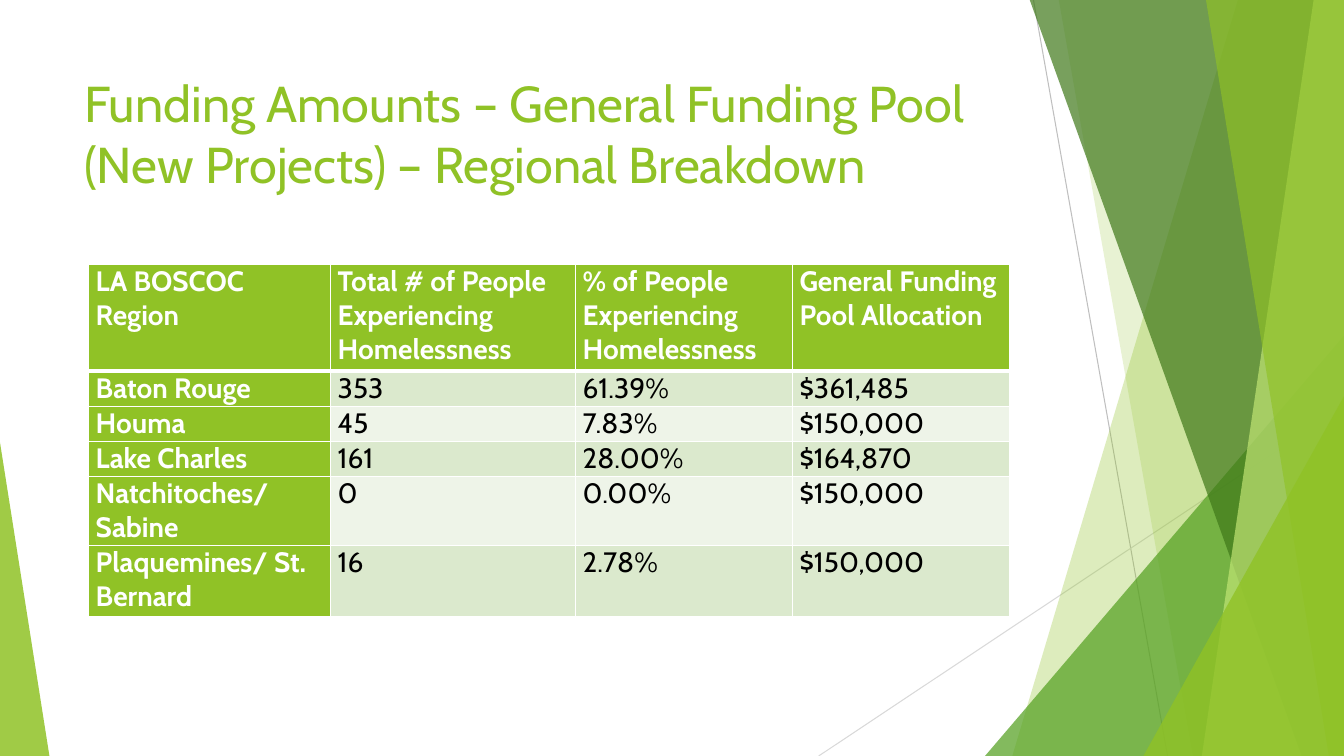
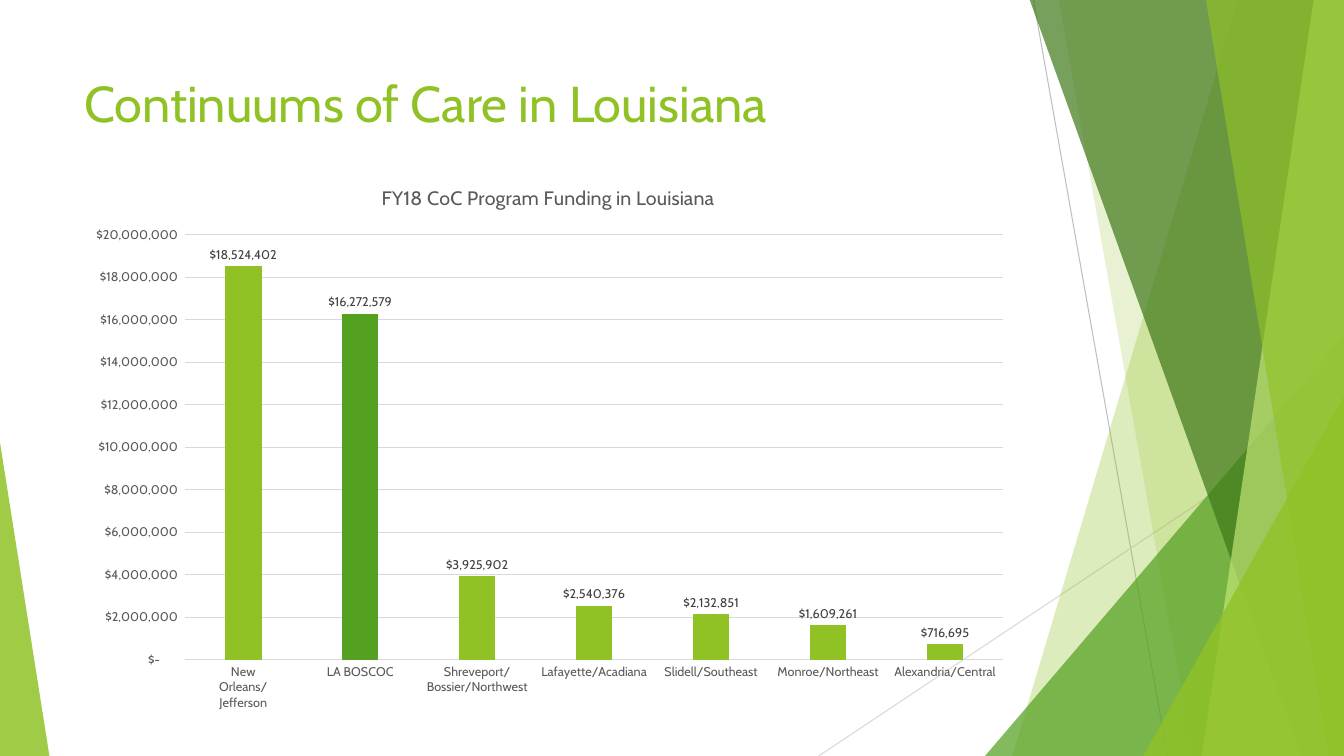
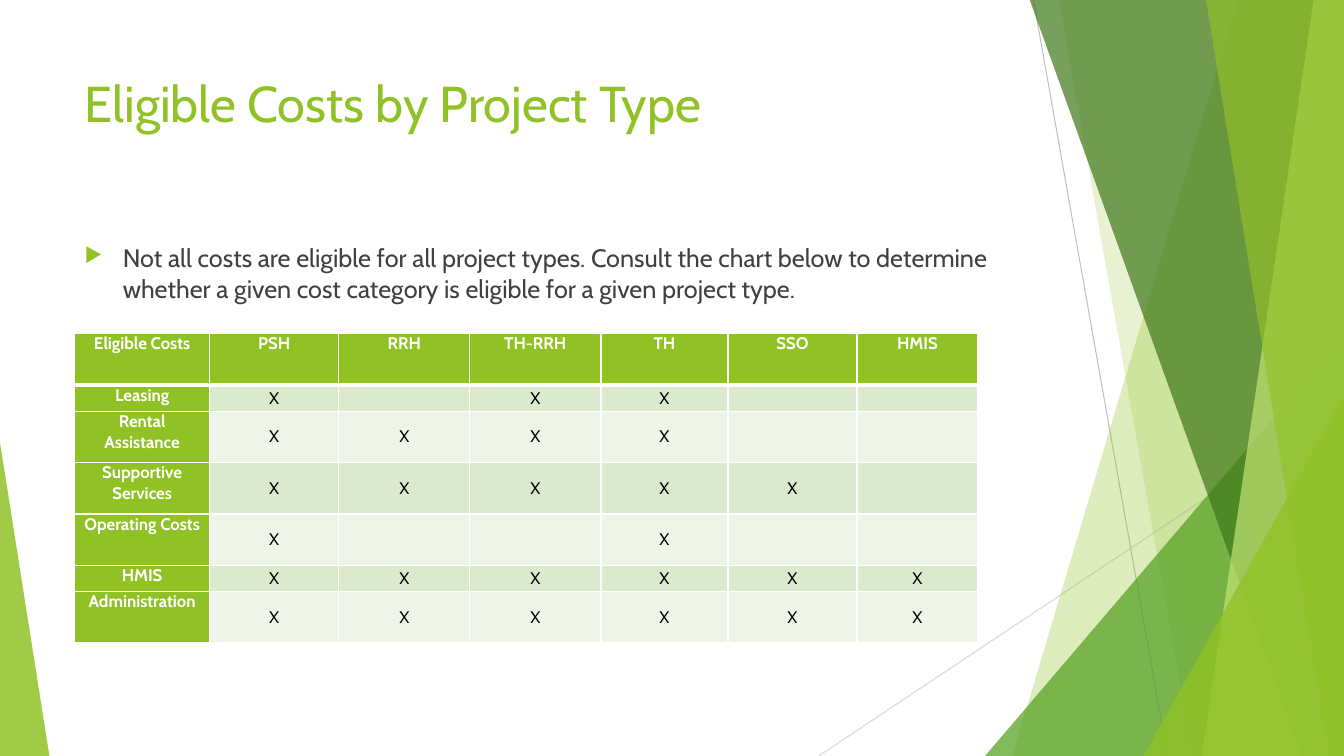
from lxml.etree import SubElement
from pptx import Presentation
from pptx.chart.data import CategoryChartData
from pptx.dml.color import RGBColor
from pptx.enum.chart import XL_CHART_TYPE, XL_LABEL_POSITION, XL_TICK_MARK
from pptx.enum.shapes import MSO_CONNECTOR, MSO_SHAPE
from pptx.enum.text import MSO_ANCHOR, PP_ALIGN
from pptx.oxml.ns import qn
from pptx.util import Inches, Pt

FONT = "Cabin"
LIME = RGBColor(0x90, 0xC2, 0x26)
GREEN = RGBColor(0x54, 0xA0, 0x21)
FOREST = RGBColor(0x3F, 0x78, 0x19)
PALE_LIME = RGBColor(0xC0, 0xE4, 0x74)
ROW_DARK = RGBColor(0xDB, 0xE9, 0xCD)
ROW_LIGHT = RGBColor(0xEE, 0xF4, 0xE8)
WHITE = RGBColor(0xFF, 0xFF, 0xFF)
BLACK = RGBColor(0, 0, 0)
INK = RGBColor(0x40, 0x40, 0x40)
GRAY = RGBColor(0x59, 0x59, 0x59)
RULE_DARK = RGBColor(0xBF, 0xBF, 0xBF)
RULE_LIGHT = RGBColor(0xD9, 0xD9, 0xD9)

WIDTH, HEIGHT = 13.33, 7.5
LEFT, CONTENT_WIDTH = 0.74, 9.4
DOLLARS = r'_("$"* #,##0_);_("$"* \(#,##0\);_("$"* "-"??_);_(@_)'


def write(frame, text, size=18, color=INK, bold=False, align=PP_ALIGN.LEFT):
    frame.word_wrap = True
    paragraph = frame.paragraphs[0]
    paragraph.alignment = align
    if text:
        run = paragraph.add_run()
        run.text = text
        run.font.name, run.font.size, run.font.bold = FONT, Pt(size), bold
        run.font.color.rgb = color
    else:  # an empty cell must not stretch its row
        paragraph._p.get_or_add_endParaRPr().set("sz", str(size * 100))
    return paragraph


def add_grid(slide, left, top, widths, heights, rows, size, align, value_anchor):
    table = slide.shapes.add_table(
        len(rows), len(widths), Inches(left), Inches(top),
        Inches(sum(widths)), Inches(sum(heights))).table
    for column, width in zip(table.columns, widths):
        column.width = Inches(width)
    for r, (row, height) in enumerate(zip(rows, heights)):
        table.rows[r].height = Inches(height)
        for c, text in enumerate(row):
            cell = table.cell(r, c)
            heading = r == 0 or c == 0
            cell.margin_left = cell.margin_right = Inches(0.07)
            cell.margin_top = cell.margin_bottom = 0
            cell.vertical_anchor = MSO_ANCHOR.TOP if heading else value_anchor
            write(cell.text_frame, text, size=size, bold=heading,
                  color=WHITE if heading else BLACK, align=align)
            # White borders, heavier under the header row
            for side in ("lnL", "lnR", "lnT", "lnB"):
                heavy = (r, side) in ((0, "lnB"), (1, "lnT"))
                border = SubElement(cell._tc.get_or_add_tcPr(), qn(f"a:{side}"),
                                    w=str(Pt(3 if heavy else 1)))
                SubElement(SubElement(border, qn("a:solidFill")),
                           qn("a:srgbClr"), val=str(WHITE))
            cell.fill.solid()
            cell.fill.fore_color.rgb = (
                LIME if heading else ROW_DARK if r % 2 else ROW_LIGHT)


prs = Presentation()
prs.slide_width, prs.slide_height = Inches(WIDTH), Inches(HEIGHT)

# Shared decoration, back to front
RULES = [((10.25, 0), (11.58, HEIGHT), RULE_DARK),
         ((WIDTH, 4.03), (8.12, HEIGHT), RULE_LIGHT)]
# A blade is (top x, bottom x) of its slanted edge and reaches the right side;
# a triangle is (left, top, width, apex) and stands on the bottom.
FACETS = [
    ((12.28, 10.04), LIME, 30),
    ((10.5, 11.83), LIME, 20),
    ((9.77, 3.33, 3.56, 1), GREEN, 72),
    ((10.21, 12.91), FOREST, 70),
    ((13.03, 11.92), PALE_LIME, 70),
    ((11.96, 13.18), LIME, 65),
    ((11.34, 3.93, 1.99, 1), LIME, 80),
    ((0, 4.39, 0.49, 0), LIME, 85),
]
TITLES = [
    "Funding Amounts – General Funding Pool (New Projects) – Regional Breakdown",
    "Continuums of Care in Louisiana",
    "Eligible Costs by Project Type",
]

slides = []
for title in TITLES:
    slide = prs.slides.add_slide(prs.slide_layouts[6])
    slides.append(slide)
    for start, end, color in RULES:
        rule = slide.shapes.add_connector(
            MSO_CONNECTOR.STRAIGHT, *map(Inches, start + end))
        rule.line.color.rgb = color
        rule.line.width = Pt(0.75)
        SubElement(rule._element.spPr, qn("a:effectLst"))
    for outline, color, opacity in FACETS:
        if len(outline) == 2:
            top_x, bottom_x = outline
            corners = [(WIDTH, -0.01), (WIDTH, HEIGHT), (bottom_x, HEIGHT)]
            builder = slide.shapes.build_freeform(Inches(top_x), Inches(-0.01))
            builder.add_line_segments(
                [(Inches(x), Inches(y)) for x, y in corners], close=True)
            facet = builder.convert_to_shape()
        else:
            left, top, width, apex = outline
            facet = slide.shapes.add_shape(
                MSO_SHAPE.ISOSCELES_TRIANGLE, Inches(left), Inches(top),
                Inches(width), Inches(HEIGHT - top))
            facet.adjustments[0] = apex
        facet.shadow.inherit = False
        facet.line.fill.background()
        facet.fill.solid()
        facet.fill.fore_color.rgb = color
        tint = facet._element.spPr.find(qn("a:solidFill"))[0]
        SubElement(tint, qn("a:alpha"), val=str(opacity * 1000))
    heading = slide.shapes.add_textbox(
        Inches(LEFT), Inches(0.67), Inches(CONTENT_WIDTH), Inches(1.44))
    write(heading.text_frame, title, size=36, color=LIME)

funding_slide, continuums_slide, costs_slide = slides

# Slide 1: regional funding table
regions = [
    ("LA BOSCOC Region", "Total # of People Experiencing Homelessness",
     "% of People Experiencing Homelessness", "General Funding Pool Allocation"),
    ("Baton Rouge", "353", "61.39%", "$361,485"),
    ("Houma", "45", "7.83%", "$150,000"),
    ("Lake Charles", "161", "28.00%", "$164,870"),
    ("Natchitoches/ Sabine", "0", "0.00%", "$150,000"),
    ("Plaquemines/ St. Bernard", "16", "2.78%", "$150,000"),
]
add_grid(funding_slide, 0.88, 2.62, [2.4, 2.43, 2.15, 2.15],
         [1.06, 0.35, 0.35, 0.35, 0.68, 0.71], regions,
         size=20, align=PP_ALIGN.LEFT, value_anchor=MSO_ANCHOR.TOP)

# Slide 2: funding chart
awards = {
    "New Orleans/Jefferson": 18524402,
    "LA BOSCOC": 16272579,
    "Shreveport/Bossier/Northwest": 3925902,
    "Lafayette/Acadiana": 2540376,
    "Slidell/Southeast": 2132851,
    "Monroe/Northeast": 1609261,
    "Alexandria/Central": 716695,
}
award_data = CategoryChartData(number_format=DOLLARS)
award_data.categories = list(awards)
award_data.add_series("Series 1", list(awards.values()))
chart = continuums_slide.shapes.add_chart(
    XL_CHART_TYPE.COLUMN_CLUSTERED, Inches(LEFT), Inches(1.63),
    Inches(CONTENT_WIDTH), Inches(5.41), award_data).chart
chart.font.name, chart.font.size = FONT, Pt(10)
chart.has_legend = False
chart.has_title = True
write(chart.chart_title.text_frame, "FY18 CoC Program Funding in Louisiana",
      size=14, color=GRAY, align=PP_ALIGN.CENTER)
chart.chart_title.include_in_layout = False

columns = chart.plots[0]
columns.gap_width, columns.overlap = 219, -27
columns.vary_by_categories = False
bars = columns.series[0]
for bar, color in ((bars, LIME), (bars.points[1], GREEN)):
    bar.format.fill.solid()
    bar.format.fill.fore_color.rgb = color

columns.has_data_labels = True
labels = columns.data_labels
labels.show_value = True
labels.position = XL_LABEL_POSITION.OUTSIDE_END
labels.number_format, labels.number_format_is_linked = DOLLARS, False

amounts, places = chart.value_axis, chart.category_axis
for part, color in ((labels, INK), (amounts, GRAY), (places, GRAY)):
    font = part.font if part is labels else part.tick_labels.font
    font.name, font.size = FONT, Pt(9)
    font.color.rgb = color
for axis in (amounts, places):
    axis.major_tick_mark = axis.minor_tick_mark = XL_TICK_MARK.NONE
amounts.minimum_scale, amounts.maximum_scale = 0, 20000000
amounts.major_unit = 2000000
amounts.tick_labels.number_format = DOLLARS
amounts.tick_labels.number_format_is_linked = False
amounts.format.line.fill.background()
for line in (amounts.major_gridlines.format.line, places.format.line):
    line.color.rgb = RULE_LIGHT
    line.width = Pt(0.75)

# Slide 3: bulleted note
note = costs_slide.shapes.add_textbox(
    Inches(LEFT), Inches(2.36), Inches(CONTENT_WIDTH), Inches(4.24))
advice = write(
    note.text_frame,
    "Not all costs are eligible for all project types. Consult the chart below "
    "to determine whether a given cost category is eligible for a given project type.")
advice.space_before = Pt(10)
bullet = advice._p.get_or_add_pPr()
bullet.set("marL", str(Inches(0.38)))
bullet.set("indent", str(Inches(-0.38)))
SubElement(SubElement(bullet, qn("a:buClr")), qn("a:srgbClr"), val=str(LIME))
SubElement(bullet, qn("a:buSzPct"), val="80000")
SubElement(bullet, qn("a:buChar"), char="▶")

# Slide 3: eligibility table
project_types = ["PSH", "RRH", "TH-RRH", "TH", "SSO", "HMIS"]
eligible = {
    "Leasing": ["PSH", "TH-RRH", "TH"],
    "Rental Assistance": project_types[:4],
    "Supportive Services": project_types[:5],
    "Operating Costs": ["PSH", "TH"],
    "HMIS": project_types,
    "Administration": project_types,
}
costs = [["Eligible Costs"] + project_types]
for cost, allowed in eligible.items():
    costs.append([cost] + ["X" if kind in allowed else "" for kind in project_types])
add_grid(costs_slide, LEFT, 3.31, [1.34, 1.28, 1.3, 1.3, 1.26, 1.28, 1.2],
         [0.51, 0.26, 0.51, 0.51, 0.51, 0.26, 0.51], costs,
         size=12, align=PP_ALIGN.CENTER, value_anchor=MSO_ANCHOR.MIDDLE)

prs.save("out.pptx")
